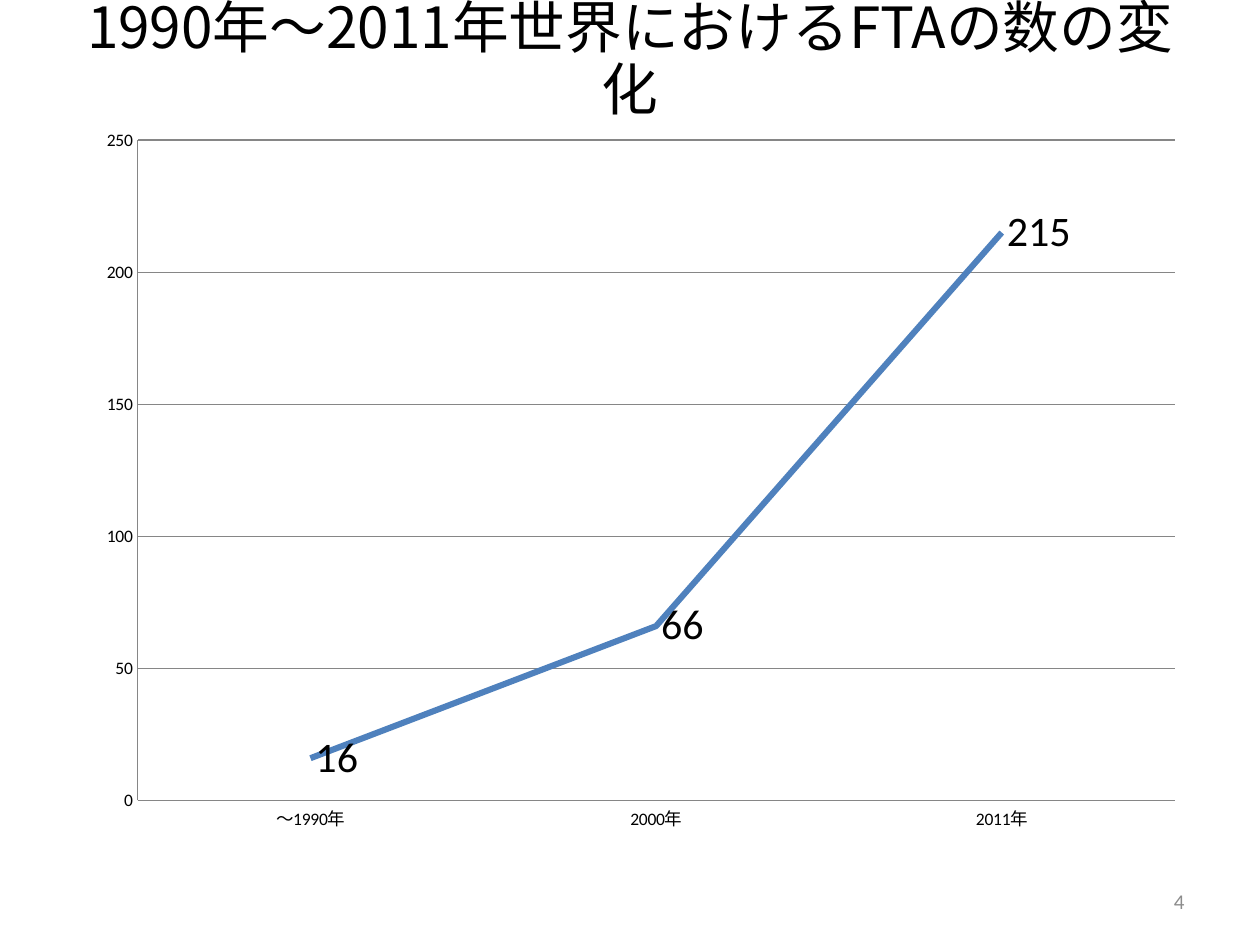
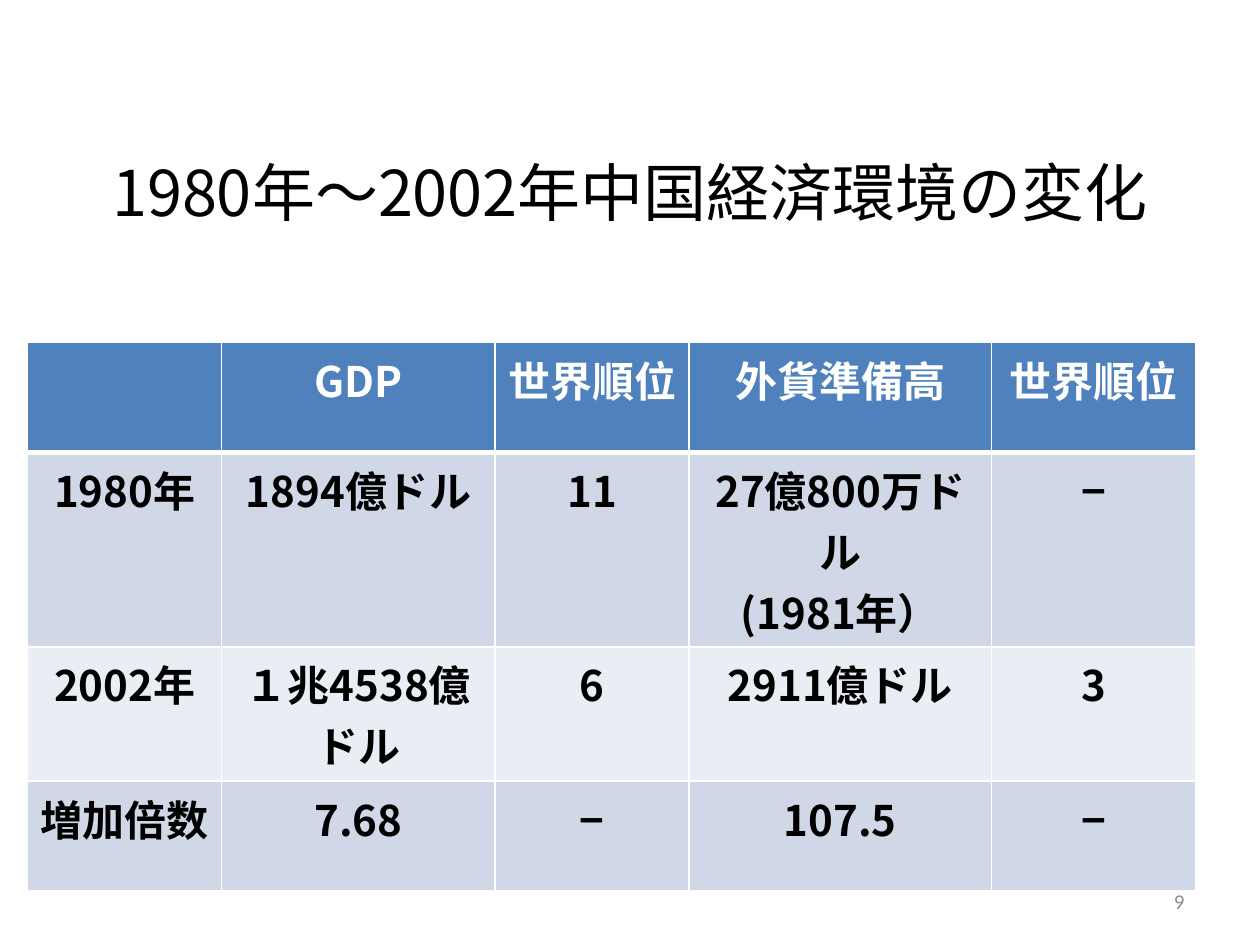
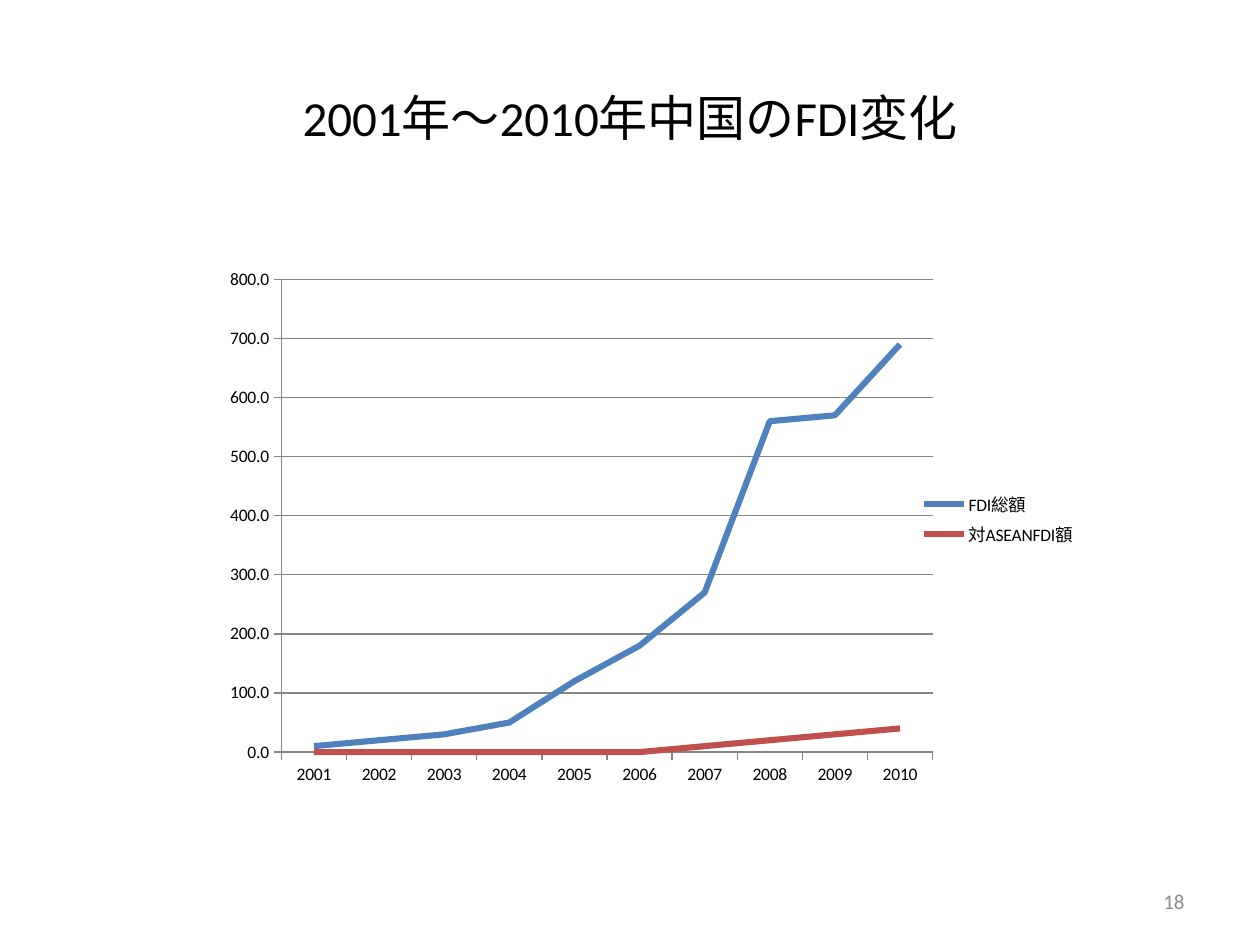
"""Build three slides on trade agreements and the Chinese economy."""
from dataclasses import dataclass
from typing import NamedTuple

from lxml import etree
from pptx import Presentation
from pptx.chart.data import CategoryChartData
from pptx.dml.color import RGBColor
from pptx.enum.chart import XL_CHART_TYPE, XL_LABEL_POSITION, XL_LEGEND_POSITION
from pptx.enum.chart import XL_MARKER_STYLE, XL_TICK_MARK
from pptx.enum.text import MSO_ANCHOR, MSO_AUTO_SIZE, PP_ALIGN
from pptx.oxml.ns import qn
from pptx.util import Inches, Pt

LINE_CHART = XL_CHART_TYPE.LINE
LABEL_RIGHT = XL_LABEL_POSITION.RIGHT
LEGEND_RIGHT = XL_LEGEND_POSITION.RIGHT
NO_MARKER = XL_MARKER_STYLE.NONE
TICK_NONE, TICK_OUT = XL_TICK_MARK.NONE, XL_TICK_MARK.OUTSIDE
MIDDLE = MSO_ANCHOR.MIDDLE
NO_FIT = MSO_AUTO_SIZE.NONE
CENTER, RIGHT = PP_ALIGN.CENTER, PP_ALIGN.RIGHT

WIDTH, HEIGHT = Inches(10), Inches(7.5)
COLUMNS = ROWS = 100


@dataclass(frozen=True)
class Theme:
    """Colours, fonts and type sizes of the deck."""

    text: str = "000000"
    white: str = "FFFFFF"
    muted: str = "8C8C8C"
    grid: str = "868686"
    blue: str = "4F81BD"
    red: str = "C0504D"
    bands: tuple[str, str] = ("D0D8E8", "E9EDF4")
    latin: str = "Calibri"
    cjk: str = "Noto Sans CJK JP"
    axis_size: float = 10
    number_size: float = 12
    cell_size: float = 24
    label_size: float = 24
    series_width: float = 3.5
    grid_width: float = 0.75


THEME = Theme()


class Box(NamedTuple):
    """A rectangle in grid columns and rows."""

    col: float
    row: float
    cols: float
    rows: float

    def place(self) -> tuple[int, int, int, int]:
        """Return left, top, width and height in EMU."""
        x, y = WIDTH / COLUMNS, HEIGHT / ROWS
        return int(self.col * x), int(self.row * y), int(self.cols * x), int(self.rows * y)


@dataclass(frozen=True)
class Title:
    """A slide title with its type and the room kept below it."""

    text: str
    box: Box
    size: float
    face: str = THEME.cjk
    spacing: float = 1.0
    inset: float = 0.05


class Series(NamedTuple):
    """One line of a chart."""

    name: str
    values: tuple[int, ...]
    color: str


@dataclass(frozen=True)
class LineChart:
    """A line chart with its axes and inner plot area."""

    box: Box
    plot: tuple[float, float, float, float]
    categories: tuple[str, ...]
    series: tuple[Series, ...]
    maximum: int
    step: int
    number_format: str = "General"
    tick: XL_TICK_MARK = TICK_NONE
    labels: bool = False
    legend: bool = False


PAGE_BOX = Box(71.7, 92.67, 23.3, 5.33)

FTA_TITLE = Title("1990年〜2011年世界におけるFTAの数の変化", Box(5, 4, 90, 12),
                  32.4, spacing=0.9, inset=0.58)
FTA_CHART = LineChart(
    box=Box(6.5, 12.53, 88.5, 76.8),
    plot=(0.05, 0.03, 0.93, 0.91),
    categories=("〜1990年", "2000年", "2011年"),
    series=(Series("Series 1", (16, 66, 215), THEME.blue),),
    maximum=250,
    step=50,
    labels=True,
)

ECONOMY_TITLE = Title("1980年〜2002年中国経済環境の変化", Box(5, 16, 90, 17.07), 36, inset=0.7)
ECONOMY_COLUMNS = (15.4, 21.7, 15.4, 24, 16.2)
ECONOMY_ROWS = (11.6, 20.6, 14.2, 11.6)
ECONOMY_BOX = Box(2.2, 36.27, sum(ECONOMY_COLUMNS), sum(ECONOMY_ROWS))
ECONOMY_CELLS = (
    ("", "GDP", "世界順位", "外貨準備高", "世界順位"),
    ("1980年", "1894億ドル", "11", "27億800万ドル\n(1981年）", "−"),
    ("2002年", "１兆4538億ドル", "6", "2911億ドル", "3"),
    ("増加倍数", "7.68", "−", "107.5", "−"),
)

FDI_TITLE = Title("2001年〜2010年中国のFDI変化", Box(5, 4, 90, 16.67), 28, face=THEME.latin)
FDI_CHART = LineChart(
    box=Box(13.6, 20.67, 72.8, 68.53),
    plot=(0.12, 0.13, 0.71, 0.73),
    categories=tuple(str(year) for year in range(2001, 2011)),
    series=(
        Series("FDI総額", (10, 20, 30, 50, 120, 180, 270, 560, 570, 690), THEME.blue),
        Series("対ASEANFDI額", (0, 0, 0, 0, 0, 0, 10, 20, 30, 40), THEME.red),
    ),
    maximum=800,
    step=100,
    number_format="0.0",
    tick=TICK_OUT,
    legend=True,
)


def rgb(color: str) -> RGBColor:
    """Turn a hex string into a colour."""
    return RGBColor.from_string(color)


def format_text(tf, size: float, color: str, face: str, align: PP_ALIGN,
                bold: bool = False) -> None:
    """Format every paragraph and run of a text frame."""
    for p in tf.paragraphs:
        p.alignment = align
        for r in p.runs:
            r.font.size = Pt(size)
            r.font.bold = bold
            r.font.name = face
            r.font.color.rgb = rgb(color)
            etree.SubElement(r._r.get_or_add_rPr(), qn("a:ea"), typeface=THEME.cjk)


def add_slide(prs, title: Title, number: int):
    """Add a slide with its title and page number."""
    s = prs.slides.add_slide(prs.slide_layouts.get_by_name("Title Only"))
    sp = s.shapes.title
    sp.left, sp.top, sp.width, sp.height = title.box.place()
    tf = sp.text_frame
    tf.text = title.text
    tf.auto_size = NO_FIT
    tf.word_wrap = True
    tf.vertical_anchor = MIDDLE
    tf.margin_bottom = Inches(title.inset)
    tf.paragraphs[0].line_spacing = title.spacing
    format_text(tf, title.size, THEME.text, title.face, CENTER)

    tf = s.shapes.add_textbox(*PAGE_BOX.place()).text_frame
    tf.text = str(number)
    tf.word_wrap = True
    tf.vertical_anchor = MIDDLE
    format_text(tf, THEME.number_size, THEME.muted, THEME.latin, RIGHT)
    return s


def set_plot_area(chart, plot: tuple[float, float, float, float]) -> None:
    """Fix the inner plot area as shares of the chart."""
    area = chart._chartSpace.chart.plotArea
    for old in area.findall(qn("c:layout")):
        area.remove(old)
    layout = etree.Element(qn("c:layout"))
    area.insert(0, layout)
    manual = etree.SubElement(layout, qn("c:manualLayout"))
    settings = [("layoutTarget", "inner"), ("xMode", "edge"), ("yMode", "edge")]
    settings += zip("xywh", map(str, plot))
    for tag, value in settings:
        etree.SubElement(manual, qn(f"c:{tag}"), val=value)


def format_line(line, color: str, width: float) -> None:
    """Set the colour and width of a line."""
    line.color.rgb = rgb(color)
    line.width = Pt(width)


def add_line_chart(s, design: LineChart) -> None:
    """Draw a line chart with its axes, labels and legend."""
    data = CategoryChartData(number_format=design.number_format)
    data.categories = design.categories
    for series in design.series:
        data.add_series(series.name, series.values)
    chart = s.shapes.add_chart(LINE_CHART, *design.box.place(), data).chart
    chart.has_title = False
    chart.font.size = Pt(THEME.axis_size)
    chart.font.name = THEME.latin
    chart.font.color.rgb = rgb(THEME.text)
    set_plot_area(chart, design.plot)

    for axis in (chart.category_axis, chart.value_axis):
        axis.major_tick_mark = design.tick
        axis.minor_tick_mark = TICK_NONE
        format_line(axis.format.line, THEME.grid, THEME.grid_width)
    axis = chart.value_axis
    axis.minimum_scale, axis.maximum_scale = 0, design.maximum
    axis.major_unit = design.step
    axis.tick_labels.number_format = design.number_format
    axis.tick_labels.number_format_is_linked = False
    axis.has_major_gridlines = True
    format_line(axis.major_gridlines.format.line, THEME.grid, THEME.grid_width)

    plot = chart.plots[0]
    plot.vary_by_categories = False
    for line, series in zip(plot.series, design.series):
        line.smooth = False
        line.marker.style = NO_MARKER
        format_line(line.format.line, series.color, THEME.series_width)
        if design.labels:
            labels = line.data_labels
            labels.show_value = True
            labels.position = LABEL_RIGHT
            labels.font.size = Pt(THEME.label_size)
            labels.font.name = THEME.latin
            labels.font.color.rgb = rgb(THEME.text)
    chart.has_legend = design.legend
    if design.legend:
        chart.legend.position = LEGEND_RIGHT
        chart.legend.include_in_layout = False


def add_borders(cell, top: float, bottom: float) -> None:
    """Give a cell white borders."""
    tc_pr = cell._tc.get_or_add_tcPr()
    for side, width in (("L", 1), ("R", 1), ("T", top), ("B", bottom)):
        ln = etree.SubElement(tc_pr, qn(f"a:ln{side}"), w=str(Pt(width)))
        fill = etree.SubElement(ln, qn("a:solidFill"))
        etree.SubElement(fill, qn("a:srgbClr"), val=THEME.white)


def add_economy_table(s) -> None:
    """Draw the table of economic figures with a header and bands."""
    rows, cols = len(ECONOMY_ROWS), len(ECONOMY_COLUMNS)
    table = s.shapes.add_table(rows, cols, *ECONOMY_BOX.place()).table
    for column, width in zip(table.columns, ECONOMY_COLUMNS):
        column.width = int(width * WIDTH / COLUMNS)
    for row, height in zip(table.rows, ECONOMY_ROWS):
        row.height = int(height * HEIGHT / ROWS)
    for i, texts in enumerate(ECONOMY_CELLS):
        header = i == 0
        fill = THEME.blue if header else THEME.bands[(i - 1) % 2]
        color = THEME.white if header else THEME.text
        for j, text in enumerate(texts):
            cell = table.cell(i, j)
            cell.text_frame.text = text
            format_text(cell.text_frame, THEME.cell_size, color, THEME.cjk, CENTER, bold=True)
            add_borders(cell, top=3 if i == 1 else 1, bottom=3 if header else 1)
            cell.fill.solid()
            cell.fill.fore_color.rgb = rgb(fill)


def main() -> None:
    """Build and save the deck."""
    prs = Presentation()
    prs.slide_width, prs.slide_height = WIDTH, HEIGHT
    add_line_chart(add_slide(prs, FTA_TITLE, 4), FTA_CHART)
    add_economy_table(add_slide(prs, ECONOMY_TITLE, 9))
    add_line_chart(add_slide(prs, FDI_TITLE, 18), FDI_CHART)
    prs.save("out.pptx")


if __name__ == "__main__":
    main()
